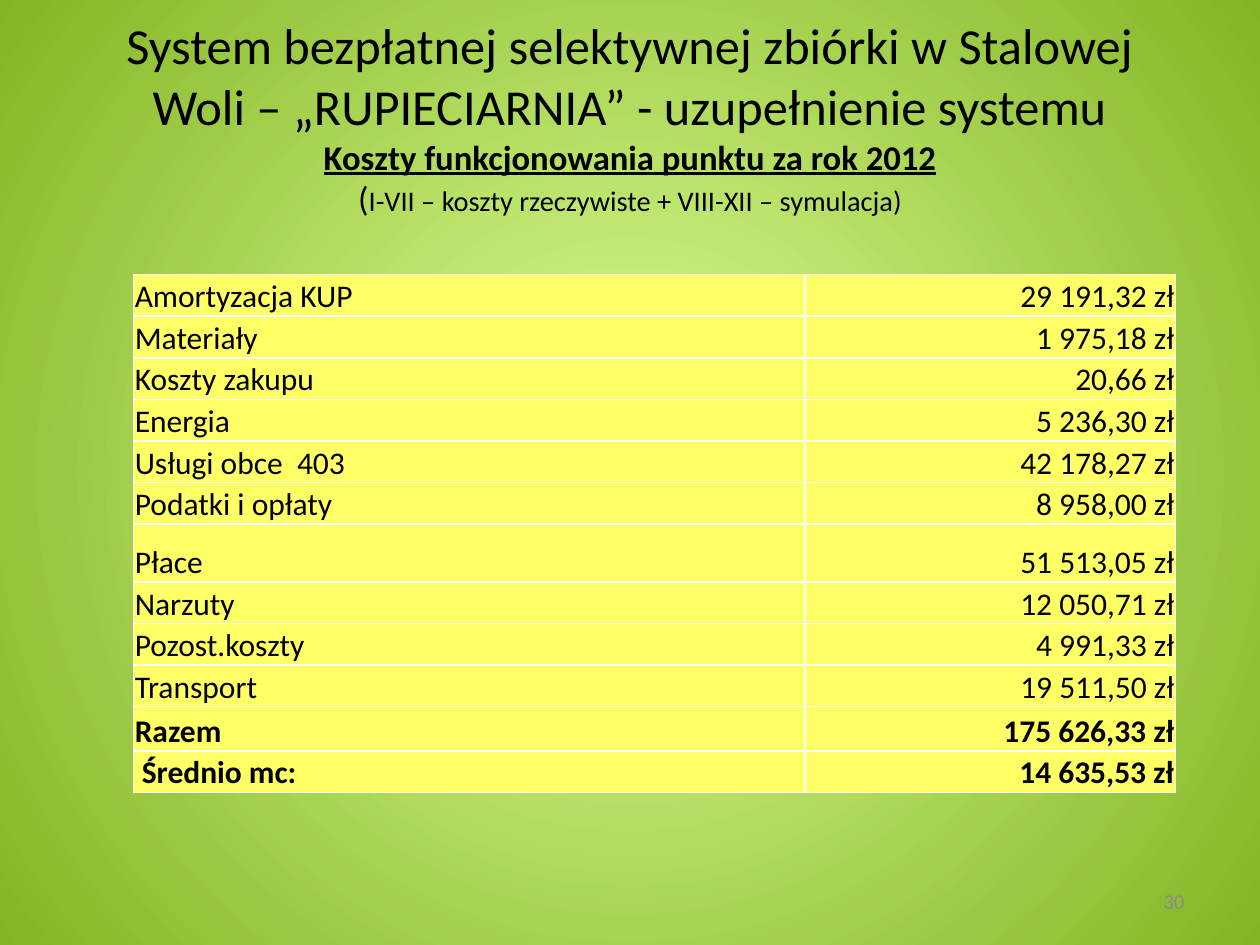
from copy import deepcopy

from lxml import etree
from pptx import Presentation
from pptx.dml.color import RGBColor
from pptx.enum.text import MSO_ANCHOR, PP_ALIGN
from pptx.oxml.ns import qn
from pptx.util import Inches, Pt

LEFT, CENTER, RIGHT = PP_ALIGN.LEFT, PP_ALIGN.CENTER, PP_ALIGN.RIGHT
MIDDLE, BOTTOM = MSO_ANCHOR.MIDDLE, MSO_ANCHOR.BOTTOM

FONT = "Calibri"
COLORS = {
    "center": "D9FF95",
    "edge": "84B423",
    "cell": "FFFF66",
    "border": "FFFFFF",
    "text": "000000",
    "number": "8B8B8B",
}

# Each title line holds runs: text, size, emphasised
TITLE_LINES = [
    [("System bezpłatnej selektywnej zbiórki w Stalowej Woli – "
      "„RUPIECIARNIA” - uzupełnienie systemu", 28.8, False)],
    [("Koszty funkcjonowania punktu za rok 2012", 19.8, True)],
    [("(", 19.8, False),
     ("I-VII – koszty rzeczywiste + VIII-XII – symulacja)", 16.2, False)],
]
COSTS = [
    ("Amortyzacja KUP", "29 191,32 zł"),
    ("Materiały", "1 975,18 zł"),
    ("Koszty zakupu", "20,66 zł"),
    ("Energia", "5 236,30 zł"),
    ("Usługi obce  403", "42 178,27 zł"),
    ("Podatki i opłaty", "8 958,00 zł"),
    ("Płace", "51 513,05 zł"),
    ("Narzuty", "12 050,71 zł"),
    ("Pozost.koszty", "4 991,33 zł"),
    ("Transport", "19 511,50 zł"),
    ("Razem", "175 626,33 zł"),
    (" Średnio mc:", "14 635,53 zł"),
]
SUMMARY_ROWS = 2
COLUMN_WIDTHS = [5.33, 2.94]
ROW_HEIGHT = 0.33
SPECIAL_HEIGHTS = {"Płace": 0.46, "Razem": 0.35}
PAGE_NUMBER = "30"


def rgb(name):
    return RGBColor.from_string(COLORS[name])


def format_run(run, size, color="text", bold=False):
    run.font.name = FONT
    run.font.size = Pt(size)
    run.font.bold = bold
    run.font.color.rgb = rgb(color)


def set_background(slide):
    fill = slide.background.fill
    fill.gradient()
    for stop, name in zip(fill.gradient_stops, ("center", "edge")):
        stop.color.rgb = rgb(name)
    gradient = slide.element.find(".//" + qn("a:gradFill"))
    gradient.remove(gradient.find(qn("a:lin")))
    circle = etree.SubElement(gradient, qn("a:path"), path="circle")
    etree.SubElement(circle, qn("a:fillToRect"),
                     l="50000", t="50000", r="50000", b="50000")


def add_title(slide):
    title = slide.shapes.title
    title.left, title.top = Inches(0.5), Inches(0.3)
    title.width, title.height = Inches(9), Inches(1.25)
    title.text_frame.vertical_anchor = MIDDLE
    title.text_frame.word_wrap = True
    paragraph = title.text_frame.paragraphs[0]
    paragraph.alignment = CENTER
    for index, line in enumerate(TITLE_LINES):
        for text, size, emphasised in line:
            run = paragraph.add_run()
            run.text = text
            format_run(run, size, bold=emphasised)
            run.font.underline = emphasised
        if index < len(TITLE_LINES) - 1:
            paragraph.add_line_break()
            # The break takes the format of the line it ends
            line_break = paragraph._p.findall(qn("a:br"))[-1]
            line_break.append(deepcopy(run._r.find(qn("a:rPr"))))


def set_borders(cell):
    properties = cell._tc.get_or_add_tcPr()
    for index, side in enumerate(("lnL", "lnR", "lnT", "lnB")):
        line = etree.Element(qn("a:" + side), w=str(Pt(1)))
        fill = etree.SubElement(line, qn("a:solidFill"))
        etree.SubElement(fill, qn("a:srgbClr"), val=COLORS["border"])
        properties.insert(index, line)


def add_cost_table(slide):
    heights = [SPECIAL_HEIGHTS.get(label, ROW_HEIGHT) for label, _ in COSTS]
    table = slide.shapes.add_table(
        len(COSTS), len(COLUMN_WIDTHS), Inches(1.06), Inches(2.18),
        Inches(sum(COLUMN_WIDTHS)), Inches(sum(heights))).table
    table.first_row = table.horz_banding = False
    for column, width in zip(table.columns, COLUMN_WIDTHS):
        column.width = Inches(width)
    for row_index, (row, height) in enumerate(zip(table.rows, heights)):
        row.height = Inches(height)
        bold = row_index >= len(COSTS) - SUMMARY_ROWS
        for cell, text, alignment in zip(row.cells, COSTS[row_index], (LEFT, RIGHT)):
            cell.fill.solid()
            cell.fill.fore_color.rgb = rgb("cell")
            cell.margin_left = cell.margin_right = cell.margin_top = Inches(0.01)
            cell.margin_bottom = 0
            cell.vertical_anchor = BOTTOM
            paragraph = cell.text_frame.paragraphs[0]
            paragraph.text = text
            paragraph.alignment = alignment
            format_run(paragraph.runs[0], 18, bold=bold)
            set_borders(cell)


def add_page_number(slide):
    box = slide.shapes.add_textbox(Inches(7.17), Inches(6.95), Inches(2.33), Inches(0.4))
    frame = box.text_frame
    frame.word_wrap = True
    frame.vertical_anchor = MIDDLE
    paragraph = frame.paragraphs[0]
    paragraph.text = PAGE_NUMBER
    paragraph.alignment = RIGHT
    format_run(paragraph.runs[0], 12, color="number")


def main():
    presentation = Presentation()
    presentation.slide_width, presentation.slide_height = Inches(10), Inches(7.5)
    slide = presentation.slides.add_slide(presentation.slide_layouts[5])
    set_background(slide)
    add_title(slide)
    add_cost_table(slide)
    add_page_number(slide)
    presentation.save("out.pptx")


if __name__ == "__main__":
    main()
